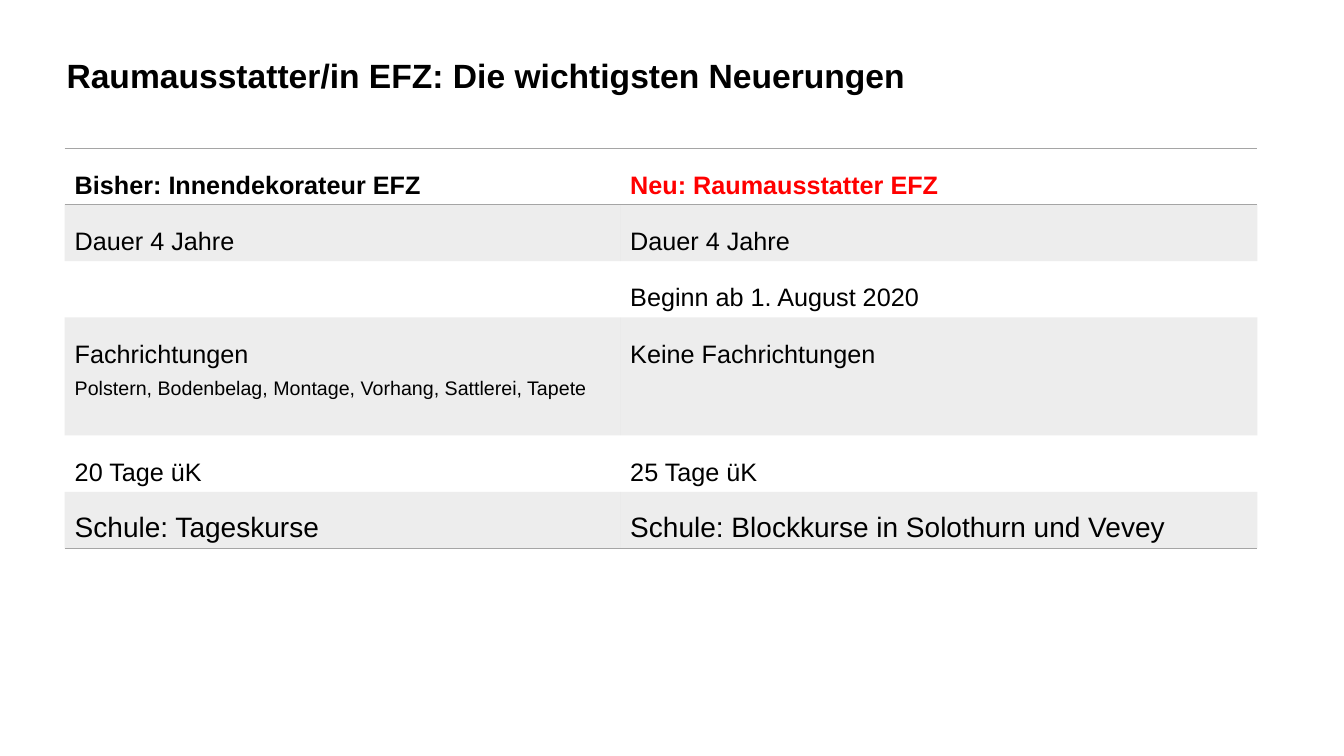
import dataclasses

import pptx
import pptx.dml.color
import pptx.enum.text
import pptx.oxml
import pptx.oxml.ns
import pptx.util

COLS, ROWS = 160, 90
NO_STYLE = "{2D5ABB26-0587-4C30-8999-92F81FD0307C}"


@dataclasses.dataclass(frozen=True)
class Theme:
    font: str = "Arial"
    text: str = "000000"
    accent: str = "FF0000"
    grey: str = "A5A5A5"
    band_alpha: int = 20
    title: int = 24
    large: int = 20
    body: int = 18
    small: int = 14
    body_line: int = 33
    small_line: int = 22
    rule: int = 1


class SlideBuilder:
    def __init__(self, prs, theme):
        self.theme = theme
        self.col = prs.slide_width / COLS
        self.row = prs.slide_height / ROWS
        self.s = prs.slides.add_slide(prs.slide_layouts[5])

    def box(self, left, top, width, height):
        """Turn grid columns and rows into slide lengths."""
        return (round(left * self.col), round(top * self.row),
                round(width * self.col), round(height * self.row))

    def run(self, p, text, size, color=None, bold=False):
        r = p.add_run()
        r.text = text
        r.font.name = self.theme.font
        r.font.size = pptx.util.Pt(size)
        r.font.bold = bold
        r.font.color.rgb = pptx.dml.color.RGBColor.from_string(color or self.theme.text)

    def title(self, text, left, top, width, height):
        sp = self.s.shapes.title
        sp.left, sp.top, sp.width, sp.height = self.box(left, top, width, height)
        tf = sp.text_frame
        tf.word_wrap = True
        tf.auto_size = pptx.enum.text.MSO_AUTO_SIZE.NONE
        tf.vertical_anchor = pptx.enum.text.MSO_ANCHOR.MIDDLE
        p = tf.paragraphs[0]
        p.alignment = pptx.enum.text.PP_ALIGN.LEFT
        p.line_spacing = 0.9
        self.run(p, text, self.theme.title, bold=True)

    def table(self, rows, left, top, widths, heights):
        frame = self.s.shapes.add_table(
            len(rows), len(widths), *self.box(left, top, sum(widths), sum(heights)))
        table = frame.table
        table.first_row = table.horz_banding = False
        style = table._tbl.tblPr.find(pptx.oxml.ns.qn("a:tableStyleId"))
        style.text = NO_STYLE
        for column, width in zip(table.columns, widths):
            column.width = round(width * self.col)
        last = len(rows) - 1
        for i, (row, height) in enumerate(zip(rows, heights)):
            table.rows[i].height = round(height * self.row)
            sides = {0: "TB", last: "B"}.get(i, "")
            for j, lines in enumerate(row):
                cell = table.cell(i, j)
                self.borders(cell, sides)
                self.band(cell, i % 2 == 1)
                self.fill_text(cell.text_frame, lines, header=i == 0, accent=j == 1)
        for cell in table.rows[last].cells:
            for r in cell.text_frame.paragraphs[0].runs:
                r.font.size = pptx.util.Pt(self.theme.large)

    def fill_text(self, tf, lines, header, accent):
        """Write the first line in body size and any detail line in small size."""
        t = self.theme
        color = t.accent if header and accent else t.text
        for k, line in enumerate(lines):
            p = tf.add_paragraph() if k else tf.paragraphs[0]
            p.line_spacing = pptx.util.Pt(t.small_line if k else t.body_line)
            self.run(p, line, t.small if k else t.body, color, header)
            if k:
                p.add_line_break()

    def borders(self, cell, sides):
        for side in sides:
            cell._tc.get_or_add_tcPr().append(pptx.oxml.parse_xml(
                f'<a:ln{side} {pptx.oxml.ns.nsdecls("a")} w="{pptx.util.Pt(self.theme.rule)}">'
                f'<a:solidFill><a:srgbClr val="{self.theme.grey}"/></a:solidFill></a:ln{side}>'))

    def band(self, cell, shaded):
        if not shaded:
            cell.fill.background()
            return
        cell.fill.solid()
        cell.fill.fore_color.rgb = pptx.dml.color.RGBColor.from_string(self.theme.grey)
        color = cell._tc.tcPr.find(".//" + pptx.oxml.ns.qn("a:solidFill") + "[last()]")
        color = cell._tc.tcPr.findall(pptx.oxml.ns.qn("a:solidFill"))[0][0]
        color.append(pptx.oxml.parse_xml(
            f'<a:alpha {pptx.oxml.ns.nsdecls("a")} val="{self.theme.band_alpha * 1000}"/>'))


def main():
    prs = pptx.Presentation()
    prs.slide_width = pptx.util.Inches(13.33)
    prs.slide_height = pptx.util.Inches(7.5)
    slide = SlideBuilder(prs, Theme())
    slide.title("Raumausstatter/in EFZ: Die wichtigsten Neuerungen", 6.72, 4.8, 150.4, 8.88)
    comparison = [
        (["Bisher: Innendekorateur EFZ"], ["Neu: Raumausstatter EFZ"]),
        (["Dauer 4 Jahre"], ["Dauer 4 Jahre"]),
        ([], ["Beginn ab 1. August 2020"]),
        (["Fachrichtungen", "Polstern, Bodenbelag, Montage, Vorhang, Sattlerei, Tapete"],
         ["Keine Fachrichtungen"]),
        (["20 Tage üK"], ["25 Tage üK"]),
        (["Schule: Tageskurse"], ["Schule: Blockkurse in Solothurn und Vevey"]),
    ]
    heights = [14.04 if len(before) > 1 else 6.72 for before, after in comparison]
    slide.table(comparison, 7.7, 17.64, [66.13, 75.87], heights)
    prs.save("out.pptx")


if __name__ == "__main__":
    main()
